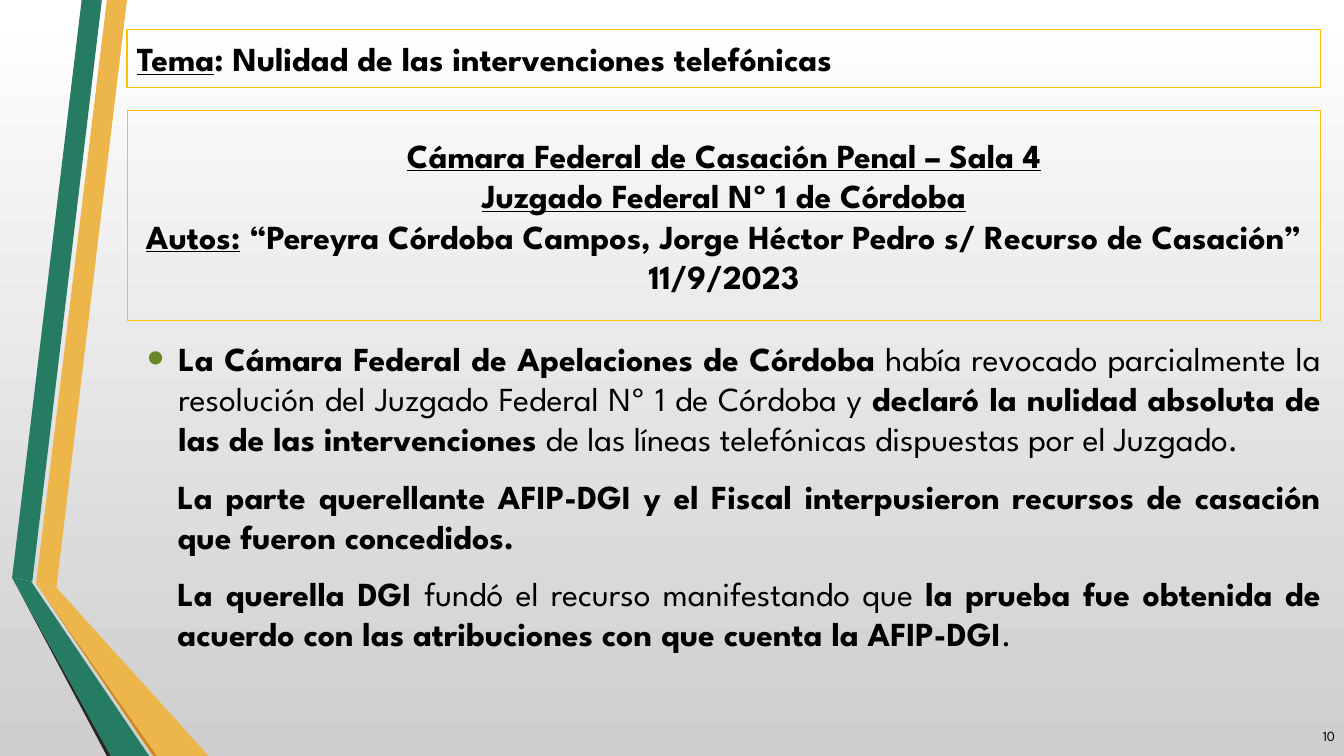
from lxml import etree
from pptx import Presentation
from pptx import util as u
from pptx.dml.color import RGBColor
from pptx.enum import shapes, text
from pptx.oxml.ns import qn

BLACK = RGBColor(0x00, 0x00, 0x00)
GOLD = RGBColor(0xFF, 0xC0, 0x00)
AMBER = RGBColor(0xEC, 0xB6, 0x4A)
DARK_AMBER = RGBColor(0xD1, 0x88, 0x17)
GREEN = RGBColor(0x26, 0x7C, 0x62)
CHARCOAL = RGBColor(0x26, 0x26, 0x26)
WHITE = RGBColor(0xFF, 0xFF, 0xFF)
GREY = RGBColor(0xCE, 0xCE, 0xCE)
BULLET_GREEN = "688727"

BOX_LEFT, BOX_WIDTH = 1.26, 11.84
BODY_INDENT = 0.3


def add_runs(paragraph, runs, size=24):
    """Add (words, style) runs; style holds b for bold and u for underline."""
    for words, style in runs:
        for number, line in enumerate(words.split("\n")):
            if number:
                paragraph.add_line_break()
            if not line:
                continue
            run = paragraph.add_run()
            run.text = line
            run.font.name = "League Spartan"
            run.font.size = u.Pt(size)
            run.font.color.rgb = BLACK
            run.font.bold = "b" in style
            run.font.underline = "u" in style


def place(shape, left, top, width, height, anchor, outlined=False):
    """Position a text shape and set its anchor, wrapping and gold outline."""
    shape.left, shape.top = u.Inches(left), u.Inches(top)
    shape.width, shape.height = u.Inches(width), u.Inches(height)
    frame = shape.text_frame
    frame.auto_size = text.MSO_AUTO_SIZE.NONE
    frame.word_wrap = True
    frame.vertical_anchor = anchor
    if outlined:
        shape.fill.background()
        shape.line.color.rgb = GOLD
        shape.line.width = u.Pt(0.75)
    return frame


presentation = Presentation()
presentation.slide_width = u.Inches(13.33)
presentation.slide_height = u.Inches(7.5)
slide = presentation.slides.add_slide(presentation.slide_layouts[1])

background = slide.background.fill
background.gradient()
background.gradient_angle = 270
for stop, color in zip(background.gradient_stops, (WHITE, GREY)):
    stop.color.rgb = color

# Ribbon outlines, in hundredths of an inch
ribbons = [
    (AMBER, [(36, 578), (56, 583), (126, 0), (106, 0)]),
    (GREEN, [(101, 0), (81, 0), (12, 573), (32, 577)]),
    (CHARCOAL, [(12, 573), (106, 750), (110, 750)]),
    (DARK_AMBER, [(36, 579), (152, 750), (156, 750)]),
    (AMBER, [(36, 579), (156, 750), (207, 750), (56, 583), (36, 578)]),
    (GREEN, [(148, 750), (35, 583), (31, 577), (12, 573), (110, 750)]),
]
for color, points in ribbons:
    builder = slide.shapes.build_freeform(*points[0], scale=u.Inches(0.01))
    builder.add_line_segments(points[1:], close=True)
    ribbon = builder.convert_to_shape()
    ribbon.shadow.inherit = False
    ribbon.fill.solid()
    ribbon.fill.fore_color.rgb = color
    ribbon.line.fill.background()

# Case heading
frame = place(slide.shapes.title, BOX_LEFT, 1.1, BOX_WIDTH, 2.08,
              text.MSO_ANCHOR.MIDDLE, outlined=True)
heading = frame.paragraphs[0]
heading.alignment = text.PP_ALIGN.CENTER
add_runs(heading, [
    ("Cámara Federal de Casación Penal – Sala 4\n"
     "Juzgado Federal Nº 1 de Córdoba\nAutos:", "bu"),
    (" “Pereyra Córdoba Campos, Jorge Héctor Pedro s/ Recurso de Casación”\n"
     "11/9/2023", "b"),
])

# Account of the case: the first paragraph has a bullet
account = [
    [("La Cámara Federal de Apelaciones de Córdoba", "b"),
     (" había revocado parcialmente la resolución del Juzgado Federal Nº 1 "
      "de Córdoba y ", ""),
     ("declaró la nulidad absoluta de las de las intervenciones ", "b"),
     ("de las líneas telefónicas dispuestas por el Juzgado.", "")],
    [("La parte querellante AFIP-DGI y el Fiscal interpusieron recursos de "
      "casación que fueron concedidos.", "b")],
    [("La querella DGI ", "b"),
     ("fundó el recurso manifestando que ", ""),
     ("la prueba fue obtenida de acuerdo con las atribuciones con que cuenta "
      "la AFIP-DGI", "b"),
     (".", "")],
]
frame = place(slide.placeholders[1], BOX_LEFT + 0.1, 3.3, BOX_WIDTH, 4.09,
              text.MSO_ANCHOR.TOP)
for number, runs in enumerate(account):
    paragraph = frame.add_paragraph() if number else frame.paragraphs[0]
    paragraph.alignment = text.PP_ALIGN.JUSTIFY
    paragraph.space_before = u.Pt(0)
    paragraph.space_after = u.Pt(12)
    add_runs(paragraph, runs)
    properties = paragraph._p.get_or_add_pPr()
    if number:
        properties.set("marL", str(u.Inches(BODY_INDENT)))
        properties.set("indent", "0")
        etree.SubElement(properties, qn("a:buNone"))
    else:
        hanging = u.Inches(BODY_INDENT + 0.01)
        properties.set("marL", str(hanging))
        properties.set("indent", str(-hanging))
        bullet_color = etree.SubElement(properties, qn("a:buClr"))
        etree.SubElement(bullet_color, qn("a:srgbClr"), val=BULLET_GREEN)
        etree.SubElement(properties, qn("a:buSzPct"), val="145000")
        etree.SubElement(properties, qn("a:buFont"), typeface="Arial")
        etree.SubElement(properties, qn("a:buChar"), char="•")

# Slide number
page_box = slide.shapes.add_textbox(0, 0, 0, 0)
frame = place(page_box, 12.74, 7.1, 0.6, 0.4, text.MSO_ANCHOR.MIDDLE)
frame.paragraphs[0].alignment = text.PP_ALIGN.RIGHT
add_runs(frame.paragraphs[0], [("10", "")], size=10)

# Topic bar
topic_box = slide.shapes.add_shape(shapes.MSO_SHAPE.RECTANGLE, 0, 0, 0, 0)
topic_box.shadow.inherit = False
frame = place(topic_box, BOX_LEFT, 0.29, BOX_WIDTH, 0.58,
              text.MSO_ANCHOR.MIDDLE, outlined=True)
frame.paragraphs[0].alignment = text.PP_ALIGN.LEFT
add_runs(frame.paragraphs[0], [
    ("Tema", "bu"),
    (": Nulidad de las intervenciones telefónicas", "b"),
])

presentation.save("out.pptx")
